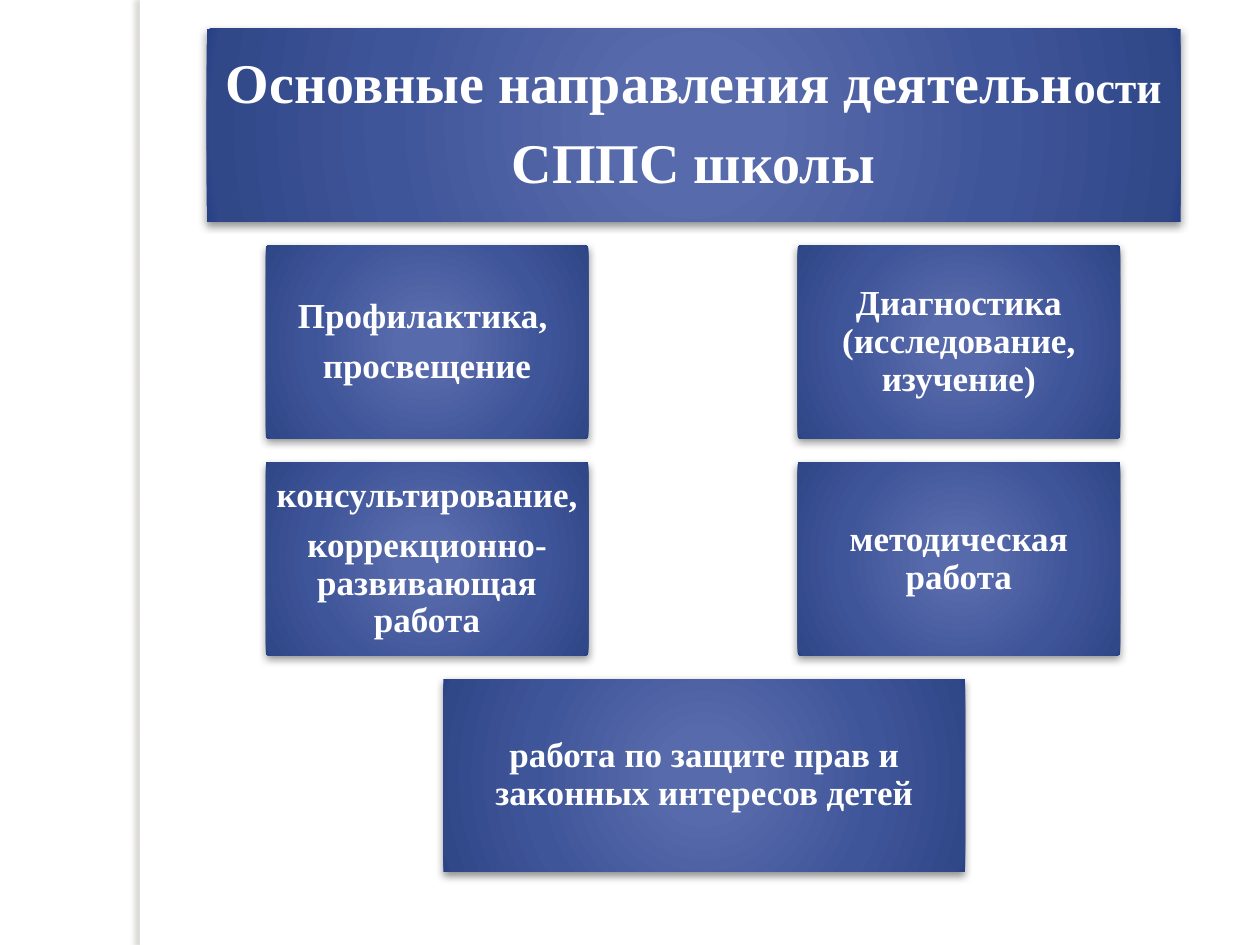
from dataclasses import dataclass

from lxml.etree import SubElement
from pptx import Presentation
from pptx.dml.color import RGBColor
from pptx.enum.shapes import MSO_SHAPE
from pptx.enum.text import MSO_ANCHOR, PP_ALIGN
from pptx.oxml.ns import qn
from pptx.util import Inches, Pt

COLORS = {
    "white": "FFFFFF",
    "strip_shadow": "736F63",
    "box_shadow": "000000",
}
# Radial gradient: position in percent, colour
GRADIENT = [(0, "576BAC"), (15, "576AAB"), (62, "3F5599"), (97, "304788"), (100, "264086")]
FONT = "Times New Roman"
BOX_HEIGHT = 1.53
ROW_TOPS = [0.23 + 1.72 * row for row in range(4)]
COLUMN_LEFTS = [2.11, 6.33]
COLUMN_WIDTH = 2.56


@dataclass
class Span:
    text: str
    size: float = 20


@dataclass
class Box:
    left: float
    top: float
    width: float
    paragraphs: list[list[Span]]
    inset: float = 0.08


@dataclass
class Shadow:
    color: str
    alpha: int
    blur: float
    distance: float
    angle: int


BOX_SHADOW = Shadow(COLORS["box_shadow"], 43, 5, 2, 90)
STRIP_SHADOW = Shadow(COLORS["strip_shadow"], 25, 3, 3, 180)


def add_color(parent, color: str):
    return SubElement(parent, qn("a:srgbClr"), val=color)


def set_shadow(shape, shadow: Shadow) -> None:
    shape.shadow.inherit = False
    effects = shape._element.spPr.find(qn("a:effectLst"))
    outer = SubElement(
        effects, qn("a:outerShdw"), blurRad=str(Pt(shadow.blur)),
        dist=str(Pt(shadow.distance)), dir=str(shadow.angle * 60000),
        algn="ctr", rotWithShape="0",
    )
    SubElement(add_color(outer, shadow.color), qn("a:alpha"), val=str(shadow.alpha * 1000))


def set_radial_fill(shape) -> None:
    shape.fill.gradient()
    fill = shape._element.spPr.find(qn("a:gradFill"))
    for child in list(fill):
        fill.remove(child)
    stops = SubElement(fill, qn("a:gsLst"))
    for position, color in GRADIENT:
        add_color(SubElement(stops, qn("a:gs"), pos=str(position * 1000)), color)
    circle = SubElement(fill, qn("a:path"), path="circle")
    SubElement(circle, qn("a:fillToRect"), l="50000", t="50000", r="50000", b="50000")


def add_rectangle(page, left: float, top: float, width: float, height: float, shadow: Shadow):
    shape = page.shapes.add_shape(
        MSO_SHAPE.RECTANGLE, Inches(left), Inches(top), Inches(width), Inches(height)
    )
    shape.line.fill.background()
    set_shadow(shape, shadow)
    return shape


def add_box(page, box: Box) -> None:
    shape = add_rectangle(page, box.left, box.top, box.width, BOX_HEIGHT, BOX_SHADOW)
    set_radial_fill(shape)
    frame = shape.text_frame
    frame.word_wrap = True
    frame.vertical_anchor = MSO_ANCHOR.MIDDLE
    frame.margin_left = frame.margin_right = Inches(box.inset)
    frame.margin_top = frame.margin_bottom = Inches(box.inset)
    for index, spans in enumerate(box.paragraphs):
        paragraph = frame.add_paragraph() if index else frame.paragraphs[0]
        paragraph.alignment = PP_ALIGN.CENTER
        paragraph.line_spacing = 0.9
        paragraph.space_after = Pt(round(0.35 * spans[0].size))
        for span in spans:
            run = paragraph.add_run()
            run.text = span.text
            run.font.name = FONT
            run.font.size = Pt(span.size)
            run.font.bold = True
            run.font.color.rgb = RGBColor.from_string(COLORS["white"])


# Activity areas, in reading order over two columns
AREAS = [
    ["Профилактика, ", "просвещение"],
    ["Диагностика (исследование, изучение)"],
    ["консультирование, ", "коррекционно-развивающая работа"],
    ["методическая работа"],
]


def main() -> None:
    deck = Presentation()
    deck.slide_width, deck.slide_height = Inches(10), Inches(7.5)
    page = deck.slides.add_slide(deck.slide_layouts[6])

    # Side strip
    strip = add_rectangle(page, 1.11, 0, 0.08, 7.5, STRIP_SHADOW)
    strip.fill.solid()
    strip.fill.fore_color.rgb = RGBColor.from_string(COLORS["white"])

    # Grid of areas
    for index, lines in enumerate(AREAS):
        row, column = divmod(index, 2)
        paragraphs = [[Span(line)] for line in lines]
        add_box(page, Box(COLUMN_LEFTS[column], ROW_TOPS[row + 1], COLUMN_WIDTH, paragraphs))

    # Bottom area
    rights = [[Span("работа по защите прав и законных интересов детей")]]
    add_box(page, Box(3.52, ROW_TOPS[3], 4.14, rights))

    # Heading
    heading = [
        [Span("Основные направления деятельн", 32), Span("ости ", 25)],
        [Span("СППС школы", 32)],
    ]
    add_box(page, Box(1.64, ROW_TOPS[0], 7.73, heading, inset=0.13))

    deck.save("out.pptx")


if __name__ == "__main__":
    main()
